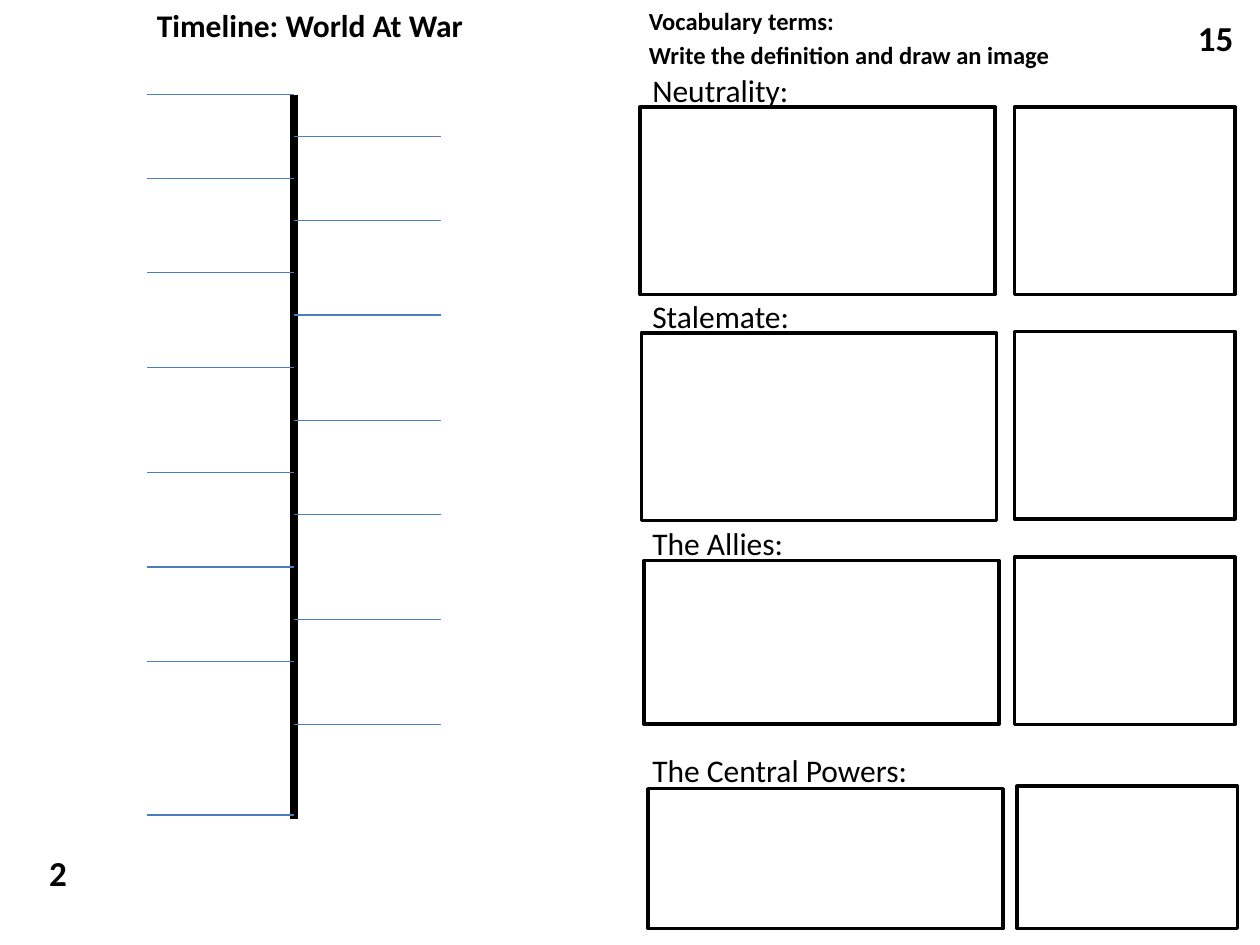
from lxml.etree import SubElement
from pptx import Presentation
from pptx.dml.color import RGBColor
from pptx.enum.shapes import MSO_CONNECTOR, MSO_SHAPE
from pptx.enum.text import MSO_ANCHOR, PP_ALIGN
from pptx.oxml.ns import qn
from pptx.util import Cm, Pt

HUES = {"ink": "000000", "tick": "4B7EBC"}


class Page:
    font = "Calibri"

    def __init__(self, deck):
        self.slide = deck.slides.add_slide(deck.slide_layouts[5])
        self.shapes = self.slide.shapes

    def hue(self, name):
        return RGBColor.from_string(HUES[name])

    def fill(self, frame, lines, size, bold, align=PP_ALIGN.LEFT, gap=0):
        frame.word_wrap = True
        frame.vertical_anchor = MSO_ANCHOR.TOP
        frame.text = "\n".join(lines)
        for i, para in enumerate(frame.paragraphs):
            para.alignment = align
            para.space_before = Pt(gap if i else 0)
            para.font.name = self.font
            para.font.size = Pt(size)
            para.font.bold = bold
            para.font.color.rgb = self.hue("ink")

    def title(self, text, x, y, w, h):
        head = self.shapes.title
        head.left, head.top, head.width, head.height = Cm(x), Cm(y), Cm(w), Cm(h)
        self.fill(head.text_frame, [text], 18, True, PP_ALIGN.CENTER)

    def text(self, lines, x, y, w, h, size, bold=False, gap=0):
        box = self.shapes.add_textbox(Cm(x), Cm(y), Cm(w), Cm(h))
        self.fill(box.text_frame, lines, size, bold, gap=gap)

    def line(self, x1, y1, x2, y2, hue, width):
        line = self.shapes.add_connector(
            MSO_CONNECTOR.STRAIGHT, Cm(x1), Cm(y1), Cm(x2), Cm(y2))
        line.line.color.rgb = self.hue(hue)
        line.line.width = Pt(width)
        SubElement(line._element.spPr, qn("a:effectLst"))

    def frame(self, x, y, w, h):
        box = self.shapes.add_shape(
            MSO_SHAPE.RECTANGLE, Cm(x), Cm(y), Cm(w), Cm(h))
        box.shadow.inherit = False
        box.fill.background()
        box.line.color.rgb = self.hue("ink")
        box.line.width = Pt(2)


def main():
    deck = Presentation()
    deck.slide_width, deck.slide_height = Cm(25.4), Cm(19.05)
    page = Page(deck)

    page.title("Timeline: World At War", 0, 0, 12.5, 1.5)
    page.text(["Vocabulary terms:", "Write the definition and draw an image"],
              12.83, 0, 12.06, 1.07, 14, True, 2.8)
    for num, x, y in [("2", 0.74, 17.04), ("15", 23.9, 0.2)]:
        page.text([num], x, y, 1.37, 1.12, 20, True)

    left, axis, right = 2.97, 5.93, 8.89
    page.line(axis, 1.91, axis, 16.51, "ink", 4.5)
    dates = [1.91, 2.75, 3.6, 4.45, 5.5, 6.35, 7.41, 8.47,
             9.53, 10.37, 11.43, 12.49, 13.34, 14.61, 16.43]
    for i, y in enumerate(dates):
        page.line(axis, y, right if i % 2 else left, y, "tick", 0.75)

    terms = [
        ("Neutrality:", (12.9, 2.16, 3.78), (20.45, 2.16, 3.78)),
        ("Stalemate:", (12.93, 6.71, 3.78), (20.45, 6.68, 3.78)),
        ("The Allies:", (12.98, 11.3, 3.3), (20.45, 11.23, 3.38)),
        ("The Central Powers:", (13.06, 15.9, 2.82), (20.5, 15.85, 2.87)),
    ]
    for i, (term, note, art) in enumerate(terms):
        page.text([term], 12.9, 1.3 + 4.57 * i, 11.13, 1.03, 18)
        for (x, y, h), w in ((note, 7.16), (art, 4.45)):
            page.frame(x, y, w, h)

    deck.save("out.pptx")


if __name__ == "__main__":
    main()
